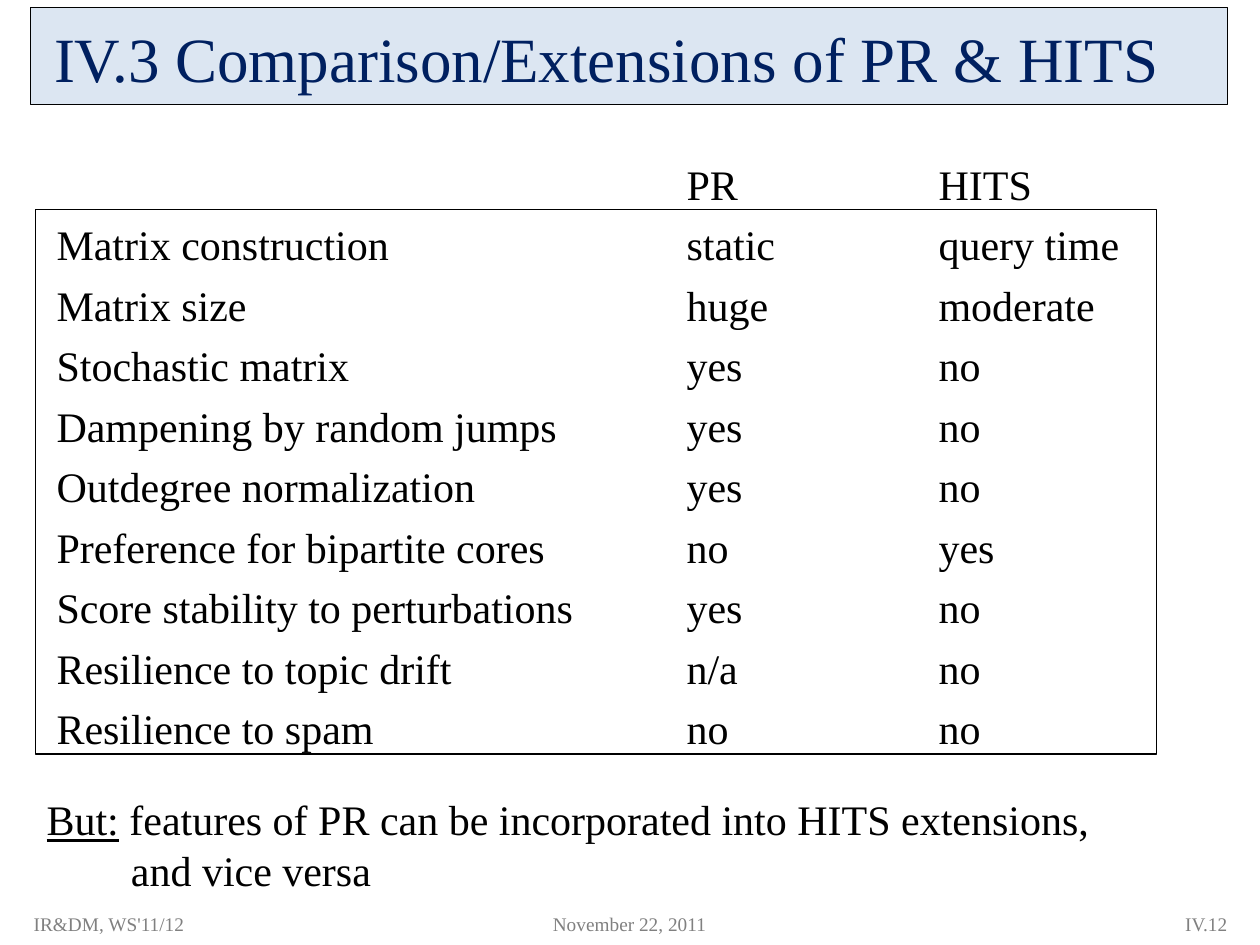
from pptx import Presentation
from pptx.dml.color import RGBColor
from pptx.enum.shapes import MSO_SHAPE
from pptx.enum.text import MSO_ANCHOR, PP_ALIGN
from pptx.util import Cm, Pt

RECT = MSO_SHAPE.RECTANGLE
TOP, MIDDLE, BOTTOM = MSO_ANCHOR.TOP, MSO_ANCHOR.MIDDLE, MSO_ANCHOR.BOTTOM
LEFT, CENTER, RIGHT = PP_ALIGN.LEFT, PP_ALIGN.CENTER, PP_ALIGN.RIGHT

FONT = "Times New Roman"
COLORS = {"bar": "DCE6F2", "title": "002060", "text": "000000", "foot": "808080"}

TITLE = "IV.3 Comparison/Extensions of PR & HITS"
ROWS = [
    ("", "PR", "HITS"),
    ("Matrix construction", "static", "query time"),
    ("Matrix size", "huge", "moderate"),
    ("Stochastic matrix", "yes", "no"),
    ("Dampening by random jumps", "yes", "no"),
    ("Outdegree normalization", "yes", "no"),
    ("Preference for bipartite cores", "no", "yes"),
    ("Score stability to perturbations", "yes", "no"),
    ("Resilience to topic drift", "n/a", "no"),
    ("Resilience to spam", "no", "no"),
]
NOTE = ("But:", " features of PR can be incorporated into HITS extensions,")
NOTE_END = "and vice versa"
FOOTERS = [  # text, left, width, alignment
    ("IR&DM, WS'11/12", 0.43, 7.62, LEFT),
    ("November 22, 2011", 9.73, 5.92, CENTER),
    ("IV.12", 19.48, 5.51, RIGHT),
]

GRID_X, GRID_Y, ROW_H = 0.71, 3.0, 1.22
COLS = (12.7, 5.08, 4.83)
INSET = 0.43


def color(name):
    return RGBColor.from_string(COLORS[name])


def add_run(para, text, size=24, tint="text"):
    run = para.add_run()
    run.text = text
    run.font.name = FONT
    run.font.size = Pt(size)
    run.font.color.rgb = color(tint)
    return run


def add_box(slide, x, y, w, h, anchor=TOP):
    frame = slide.shapes.add_textbox(Cm(x), Cm(y), Cm(w), Cm(h)).text_frame
    frame.word_wrap = True
    frame.vertical_anchor = anchor
    return frame


def add_rect(slide, x, y, w, h, fill=None):
    rect = slide.shapes.add_shape(RECT, Cm(x), Cm(y), Cm(w), Cm(h))
    rect.shadow.inherit = False
    if fill:
        rect.fill.solid()
        rect.fill.fore_color.rgb = color(fill)
    else:
        rect.fill.background()
    rect.line.color.rgb = color("text")
    rect.line.width = Pt(0.75)


def add_grid(slide):
    """Comparison table, with a frame around all rows below the header."""
    width = sum(COLS)
    table = slide.shapes.add_table(
        len(ROWS), len(COLS), Cm(GRID_X), Cm(GRID_Y),
        Cm(width), Cm(ROW_H * len(ROWS))).table
    table.first_row = table.horz_banding = False
    for col, size in zip(table.columns, COLS):
        col.width = Cm(size)
    for row, words in zip(table.rows, ROWS):
        row.height = Cm(ROW_H)
        for cell, word in zip(row.cells, words):
            cell.fill.background()
            cell.margin_left = Cm(INSET)
            cell.margin_right = cell.margin_top = cell.margin_bottom = 0
            cell.vertical_anchor = BOTTOM
            add_run(cell.text_frame.paragraphs[0], word)
    add_rect(slide, GRID_X, GRID_Y + ROW_H, width, ROW_H * (len(ROWS) - 1))


def add_note(slide):
    frame = add_box(slide, 0.69, 15.88, 21.95, 2.31)
    first = frame.paragraphs[0]
    lead, rest = NOTE
    add_run(first, lead).font.underline = True
    add_run(first, rest)
    last = frame.add_paragraph()
    last._p.get_or_add_pPr().set("marL", str(Cm(1.7)))
    add_run(last, NOTE_END)


def main():
    deck = Presentation()
    deck.slide_width, deck.slide_height = Cm(25.4), Cm(19.05)
    slide = deck.slides.add_slide(deck.slide_layouts[6])
    add_rect(slide, 0.61, 0.15, 24.13, 1.96, "bar")
    title = add_box(slide, 0.84, 0.2, 24.56, 1.9, MIDDLE)
    add_run(title.paragraphs[0], TITLE, 36, "title")
    add_grid(slide)
    add_note(slide)
    for text, x, w, align in FOOTERS:
        para = add_box(slide, x, 18.21, w, 0.84, MIDDLE).paragraphs[0]
        para.alignment = align
        add_run(para, text, 11, "foot")
    deck.save("out.pptx")


if __name__ == "__main__":
    main()
